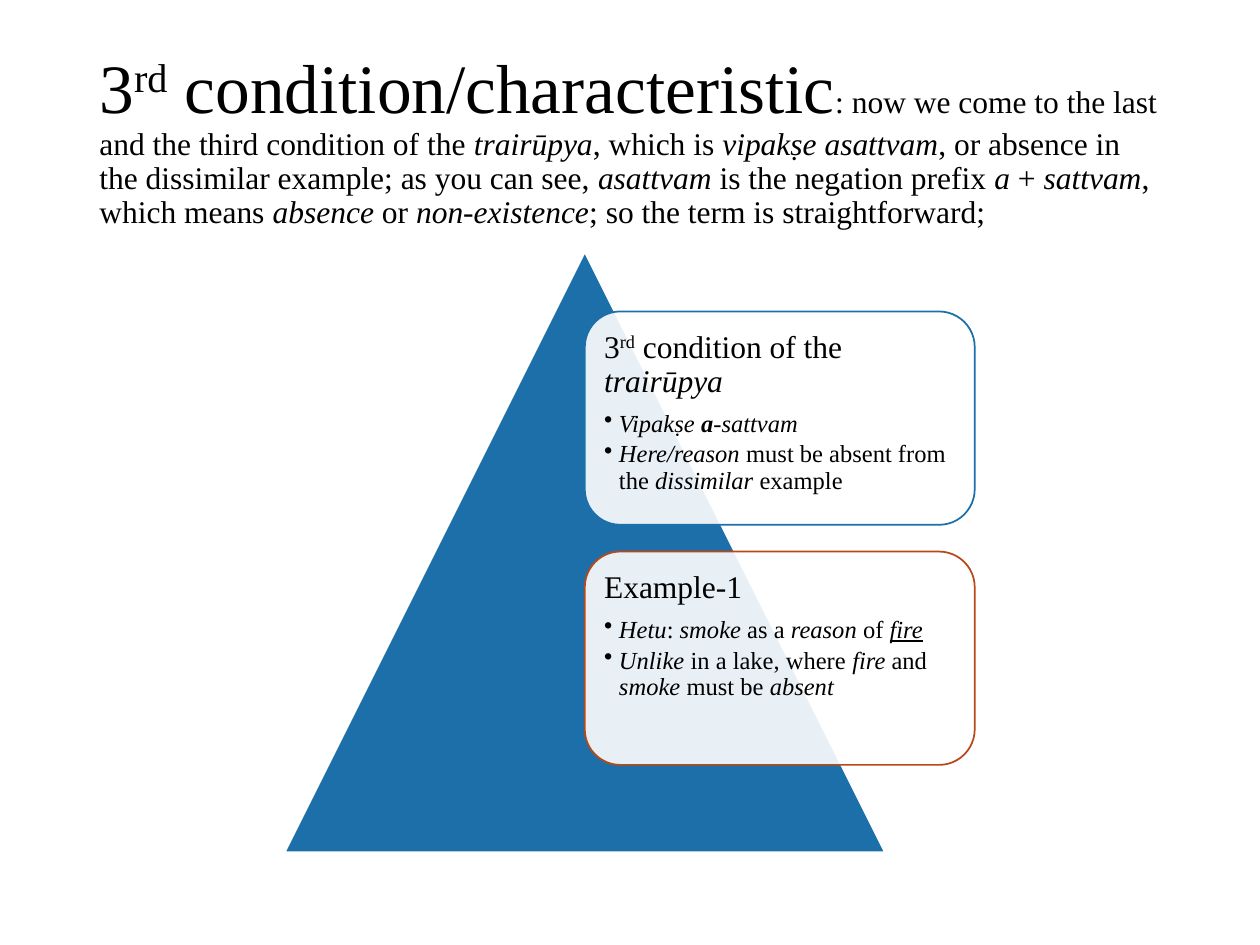
from dataclasses import dataclass

from lxml import etree
from pptx import Presentation
from pptx import util as u
from pptx.dml.color import RGBColor
from pptx.enum import shapes, text
from pptx.oxml import ns


@dataclass(frozen=True)
class Theme:
    font: str = "Times New Roman"
    ink: str = "000000"
    paper: str = "FFFFFF"
    blue: str = "1D6FA9"
    rust: str = "B74919"
    title_size: float = 39.6
    text_size: float = 18
    bullet_size: float = 14
    line_width: float = 1
    line_spacing: float = 0.9
    card_opacity: int = 90


class SlideBuilder:
    def __init__(self, slide, theme):
        self.slide = slide
        self.theme = theme
        self.diagram = slide.shapes.add_group_shape()

    def add_runs(self, paragraph, runs, size):
        paragraph.alignment = text.PP_ALIGN.LEFT
        paragraph.line_spacing = self.theme.line_spacing
        for words, marks in runs:
            run = paragraph.add_run()
            run.text = words
            font = run.font
            font.name = self.theme.font
            font.size = u.Pt(size)
            font.color.rgb = RGBColor.from_string(self.theme.ink)
            font.italic = "i" in marks
            font.bold = "b" in marks
            font.underline = "u" in marks
            if "^" in marks:
                run._r.get_or_add_rPr().set("baseline", "30000")

    def title(self, heading, explanation, left, top, width, height):
        title = self.slide.shapes.title
        title.left, title.top = u.Cm(left), u.Cm(top)
        title.width, title.height = u.Cm(width), u.Cm(height)
        frame = title.text_frame
        frame.auto_size = text.MSO_AUTO_SIZE.NONE
        frame.vertical_anchor = text.MSO_ANCHOR.MIDDLE
        paragraph = frame.paragraphs[0]
        self.add_runs(paragraph, heading, self.theme.title_size)
        self.add_runs(paragraph, explanation, self.theme.text_size)

    def shape(self, kind, left, top, width, height, fill, line):
        shape = self.diagram.shapes.add_shape(
            kind, u.Cm(left), u.Cm(top), u.Cm(width), u.Cm(height))
        shape.shadow.inherit = False
        shape.fill.solid()
        shape.fill.fore_color.rgb = RGBColor.from_string(fill)
        shape.line.color.rgb = RGBColor.from_string(line)
        shape.line.width = u.Pt(self.theme.line_width)
        return shape

    def triangle(self, left, top, size):
        self.shape(shapes.MSO_SHAPE.ISOSCELES_TRIANGLE, left, top, size, size,
                   self.theme.blue, self.theme.paper)

    def bullet(self, paragraph):
        properties = paragraph._p.get_or_add_pPr()
        properties.set("marL", str(u.Cm(0.3)))
        properties.set("indent", str(-u.Cm(0.3)))
        etree.SubElement(properties, ns.qn("a:buChar")).set("char", "•")

    def card(self, heading, bullets, left, top, width, height, line):
        card = self.shape(shapes.MSO_SHAPE.ROUNDED_RECTANGLE, left, top, width, height,
                          self.theme.paper, line)
        color = card.fill._xPr.find(ns.qn("a:solidFill"))[0]
        etree.SubElement(color, ns.qn("a:alpha")).set("val", str(self.theme.card_opacity * 1000))
        frame = card.text_frame
        frame.word_wrap = True
        frame.vertical_anchor = text.MSO_ANCHOR.TOP
        frame.margin_left = frame.margin_right = u.Cm(0.18)
        frame.margin_top = frame.margin_bottom = u.Cm(0.18)
        first = frame.paragraphs[0]
        self.add_runs(first, heading, self.theme.text_size)
        first.space_after = u.Pt(7)
        for runs in bullets:
            paragraph = frame.add_paragraph()
            self.add_runs(paragraph, runs, self.theme.bullet_size)
            paragraph.space_after = u.Pt(2.4)
            self.bullet(paragraph)


TITLE_HEADING = [("3", ""), ("rd", "^"), (" condition/characteristic", "")]
TITLE_EXPLANATION = [
    (": now we come to the last and the third condition of the ", ""),
    ("trairūpya", "i"), (", which is ", ""), ("vipakṣe asattvam", "i"),
    (", or absence in the dissimilar example; as you can see, ", ""),
    ("asattvam", "i"), (" is the negation prefix ", ""), ("a", "i"), (" + ", ""),
    ("sattvam", "i"), (", which means ", ""), ("absence", "i"), (" or ", ""),
    ("non-existence", "i"), ("; so the term is straightforward;", ""),
]
CONDITION_HEADING = [("3", ""), ("rd", "^"), (" condition of the ", ""), ("trairūpya", "i")]
CONDITION_BULLETS = [
    [("Vipakṣe ", "i"), ("a", "bi"), ("-sattvam", "i")],
    [("Here/reason", "i"), (" must be absent from the ", ""), ("dissimilar", "i"),
     (" example", "")],
]
EXAMPLE_HEADING = [("Example-1", "")]
EXAMPLE_BULLETS = [
    [("Hetu", "i"), (": ", ""), ("smoke", "i"), (" as a ", ""), ("reason", "i"),
     (" of ", ""), ("fire", "iu")],
    [("Unlike", "i"), (" in a lake, where ", ""), ("fire", "i"), (" and ", ""),
     ("smoke", "i"), (" must be ", ""), ("absent", "i")],
]


def main():
    theme = Theme()
    presentation = Presentation()
    presentation.slide_width, presentation.slide_height = u.Cm(25.4), u.Cm(19.05)
    slide = presentation.slides.add_slide(presentation.slide_layouts[5])
    builder = SlideBuilder(slide, theme)
    builder.title(TITLE_HEADING, TITLE_EXPLANATION, 1.75, 1.02, 21.9, 3.68)

    triangle_left, triangle_top, triangle_size = 5.74, 5.08, 12.1
    builder.triangle(triangle_left, triangle_top, triangle_size)

    card_left = triangle_left + triangle_size / 2
    card_top, card_height, card_gap = 6.28, 4.3, 0.54
    cards = [
        (CONDITION_HEADING, CONDITION_BULLETS, theme.blue),
        (EXAMPLE_HEADING, EXAMPLE_BULLETS, theme.rust),
    ]
    for index, (heading, bullets, line) in enumerate(cards):
        top = card_top + index * (card_height + card_gap)
        builder.card(heading, bullets, card_left, top, 7.86, card_height, line)
    presentation.save("out.pptx")


if __name__ == "__main__":
    main()
